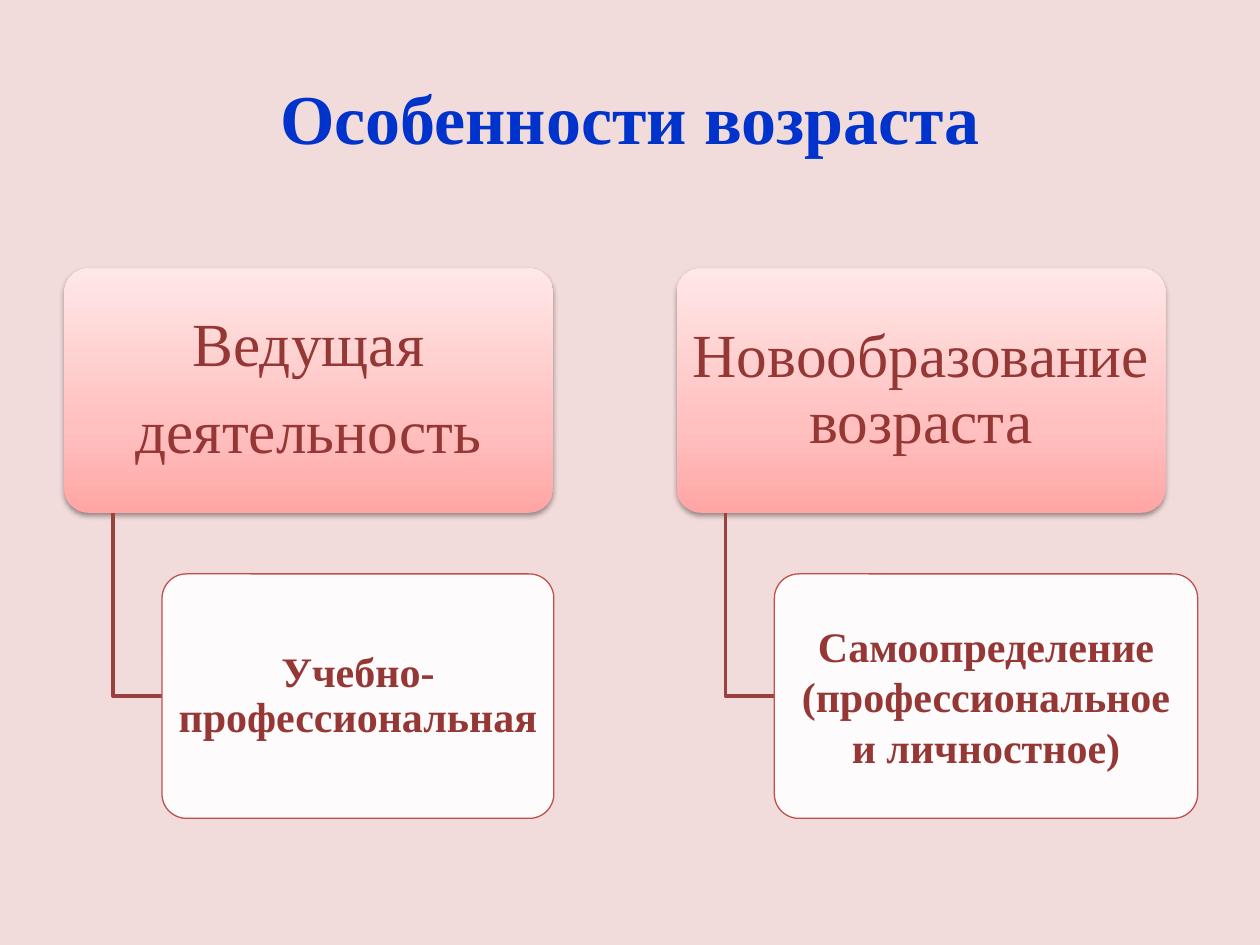
from lxml import etree
from pptx import Presentation
from pptx.dml.color import RGBColor
from pptx.enum.shapes import MSO_SHAPE
from pptx.enum.text import MSO_ANCHOR, PP_ALIGN
from pptx.oxml.ns import qn
from pptx.util import Inches, Pt

ROUND = MSO_SHAPE.ROUNDED_RECTANGLE
MIDDLE = MSO_ANCHOR.MIDDLE
CENTER = PP_ALIGN.CENTER

PINK = RGBColor(0xF2, 0xDC, 0xDB)
BLUE = RGBColor(0x00, 0x33, 0xCC)
WINE = RGBColor(0x95, 0x37, 0x35)
BRICK = RGBColor(0x9A, 0x40, 0x3E)
RED = RGBColor(0xC0, 0x50, 0x4D)
WHITE = RGBColor(0xFF, 0xFF, 0xFF)
STOPS = [(0, "FFA6A5"), (35, "FFC0BF"), (100, "FFE7E7")]
FONT = "Times New Roman"

TITLE = "Особенности возраста"
TREES = [
    {"head": ["Ведущая", "деятельность"],
     "leaf": ["Учебно-профессиональная"],
     "wide": 3.11, "text": {"space": 0.9, "after": 8}},
    {"head": ["Новообразование возраста"],
     "leaf": ["Самоопределение (профессиональное и личностное)"],
     "wide": 3.36, "text": {}},
]

LEFT, TOP, STEP = 0.51, 2.13, 4.86
WIDE, HIGH = 3.88, 1.94
GAP = HIGH / 4
STEM = WIDE / 10


def add(node, tag, **attrs):
    return etree.SubElement(node, qn(tag), attrs)


def write(shape, lines, size, color, bold=False, space=None, after=0,
          inset=(0.1, 0.05)):
    frame = shape.text_frame
    frame.word_wrap = True
    frame.vertical_anchor = MIDDLE
    frame.margin_left = frame.margin_right = Inches(inset[0])
    frame.margin_top = frame.margin_bottom = Inches(inset[1])
    for i, line in enumerate(lines):
        para = frame.add_paragraph() if i else frame.paragraphs[0]
        para.alignment = CENTER
        para.line_spacing = space
        para.space_after = Pt(after)
        run = para.add_run()
        run.text = line
        font = run.font
        font.name, font.size, font.bold = FONT, Pt(size), bold
        font.color.rgb = color


def box(slide, x, y, wide):
    shape = slide.shapes.add_shape(
        ROUND, Inches(x), Inches(y), Inches(wide), Inches(HIGH))
    shape.adjustments[0] = 0.1
    shape.shadow.inherit = False
    return shape


def shade(shape):
    shape.line.fill.background()
    shape.fill.gradient()
    shape.fill.gradient_angle = 90
    props = shape.element.spPr
    stops = props.find(".//" + qn("a:gsLst"))
    for old in list(stops):
        stops.remove(old)
    for pos, color in STOPS:
        stop = add(stops, "a:gs", pos=str(pos * 1000))
        add(stop, "a:srgbClr", val=color)
    shadow = add(props.find(qn("a:effectLst")), "a:outerShdw",
                 blurRad=str(Pt(3.1)), dist=str(Pt(1.6)),
                 dir="5400000", rotWithShape="0")
    add(add(shadow, "a:srgbClr", val="000000"), "a:alpha", val="38000")


def elbow(slide, x, top, end, mid):
    pen = slide.shapes.build_freeform(Inches(x), Inches(top))
    pen.add_line_segments(
        [(Inches(x), Inches(mid)), (Inches(end), Inches(mid))], close=False)
    shape = pen.convert_to_shape()
    shape.shadow.inherit = False
    shape.fill.background()
    shape.line.color.rgb = BRICK
    shape.line.width = Pt(2)


def tree(slide, x, data):
    head = box(slide, x, TOP, WIDE)
    shade(head)
    write(head, data["head"], 35, WINE, space=0.9, after=12,
          inset=(0.07, 0.05))
    base = TOP + HIGH
    low = base + GAP
    elbow(slide, x + STEM, base, x + 2 * STEM, low + HIGH / 2)
    leaf = box(slide, x + 2 * STEM, low, data["wide"])
    leaf.fill.solid()
    leaf.fill.fore_color.rgb = WHITE
    add(leaf.element.spPr.find(qn("a:solidFill"))[0], "a:alpha", val="90000")
    leaf.line.color.rgb = RED
    leaf.line.width = Pt(0.75)
    write(leaf, data["leaf"], 24, WINE, bold=True, inset=(0.05, 0.03),
          **data["text"])


def main():
    deck = Presentation()
    deck.slide_width, deck.slide_height = Inches(10), Inches(7.5)
    slide = deck.slides.add_slide(deck.slide_layouts[6])
    slide.background.fill.solid()
    slide.background.fill.fore_color.rgb = PINK
    title = slide.shapes.add_textbox(
        Inches(0.5), Inches(0.3), Inches(9), Inches(1.25))
    write(title, [TITLE], 40, BLUE, bold=True)
    for i, data in enumerate(TREES):
        tree(slide, LEFT + i * STEP, data)
    deck.save("out.pptx")


if __name__ == "__main__":
    main()
